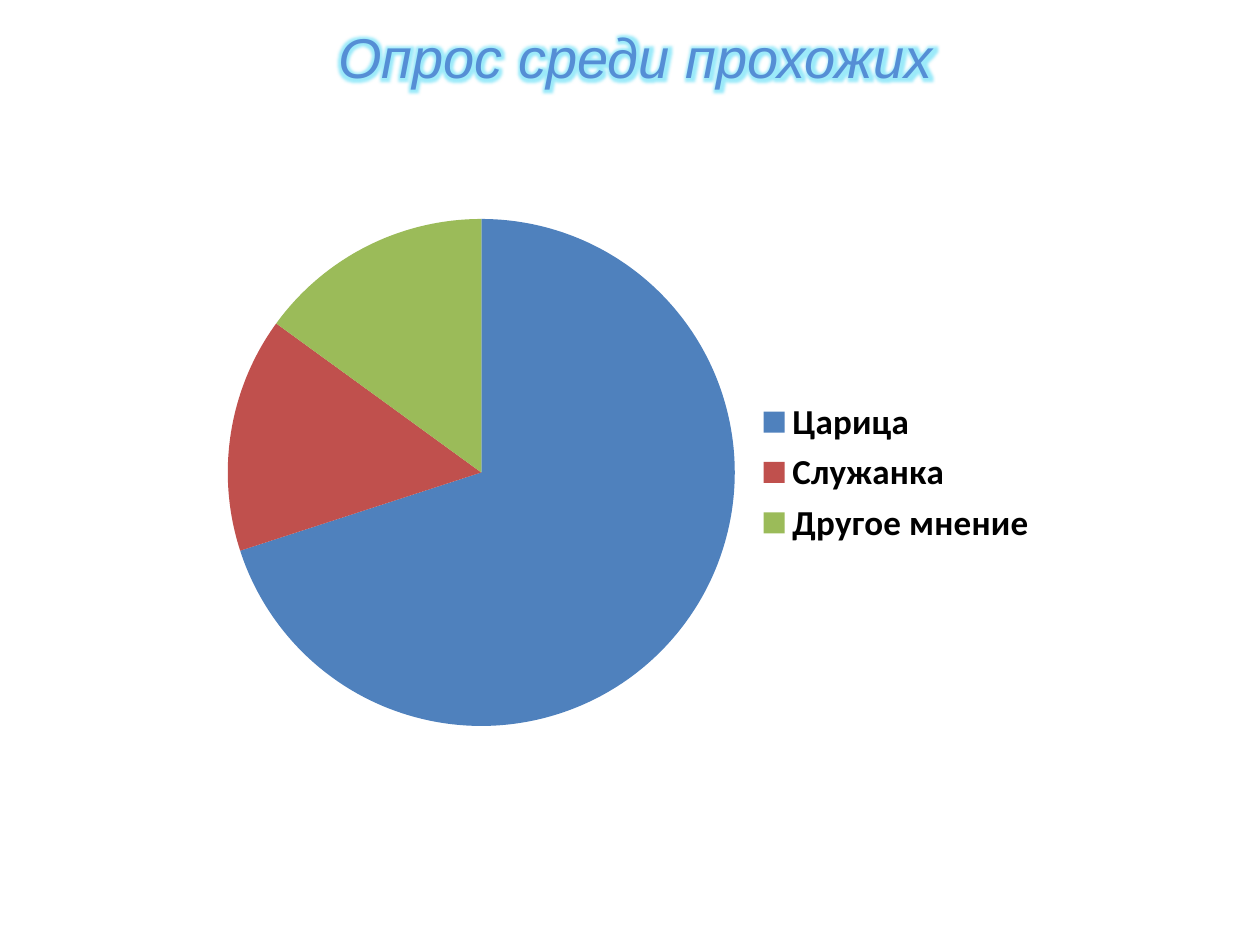
from dataclasses import dataclass

from lxml import etree
from pptx import Presentation
from pptx.chart.data import CategoryChartData
from pptx.dml.color import RGBColor
from pptx.enum.chart import XL_CHART_TYPE, XL_LEGEND_POSITION
from pptx.enum.text import MSO_ANCHOR, MSO_AUTO_SIZE, PP_ALIGN
from pptx.oxml.ns import qn
from pptx.util import Inches, Pt

PIE = XL_CHART_TYPE.PIE
RIGHT = XL_LEGEND_POSITION.RIGHT
TOP = MSO_ANCHOR.TOP
GROW = MSO_AUTO_SIZE.SHAPE_TO_FIT_TEXT
CENTER = PP_ALIGN.CENTER


@dataclass
class Theme:
    title_font: str = "Arial"
    chart_font: str = "Calibri"
    title_size: int = 32
    chart_size: int = 18
    legend_size: int = 20
    title: str = "558ED5"
    glow: str = "5ADDF7"
    text: str = "000000"
    slices: tuple = ("4F81BD", "C0504D", "9BBB59")


theme = Theme()
rgb = RGBColor.from_string

prs = Presentation()
prs.slide_width, prs.slide_height = Inches(10), Inches(7.5)
s = prs.slides.add_slide(prs.slide_layouts[5])

# Title
title = s.shapes.title
title.left, title.top = Inches(0.91), Inches(0.13)
title.width, title.height = Inches(8.27), Inches(0.64)
tf = title.text_frame
tf.text = "Опрос среди прохожих"
tf.word_wrap = True
tf.auto_size = GROW
tf.vertical_anchor = TOP
p = tf.paragraphs[0]
p.alignment = CENTER
r = p.runs[0]
r.font.name = theme.title_font
r.font.size = Pt(theme.title_size)
r.font.italic = True
r.font.color.rgb = rgb(theme.title)

# Title outline and glow
rPr = r.font.fill._xPr
ln = etree.Element(qn("a:ln"), w=str(Pt(0.75)))
line_fill = etree.SubElement(ln, qn("a:solidFill"))
etree.SubElement(line_fill, qn("a:srgbClr"), val=theme.title)
rPr.insert(0, ln)
effects = etree.Element(qn("a:effectLst"))
glow = etree.SubElement(effects, qn("a:glow"), rad=str(Pt(8)))
glow_color = etree.SubElement(glow, qn("a:srgbClr"), val=theme.glow)
etree.SubElement(glow_color, qn("a:alpha"), val="60000")
rPr.find(qn("a:solidFill")).addnext(effects)

# Survey pie chart
data = CategoryChartData()
data.categories = ["Царица", "Служанка", "Другое мнение"]
data.add_series("Series 1", (70, 15, 15))
chart = s.shapes.add_chart(
    PIE, Inches(1.67), Inches(1.53), Inches(6.67), Inches(4.44), data
).chart
chart.has_title = False
chart.font.name = theme.chart_font
chart.font.size = Pt(theme.chart_size)
chart.font.color.rgb = rgb(theme.text)

plot = chart.plots[0]
plot.vary_by_categories = True
for i, color in enumerate(theme.slices):
    fill = plot.series[0].points[i].format.fill
    fill.solid()
    fill.fore_color.rgb = rgb(color)

# Legend
chart.has_legend = True
legend = chart.legend
legend.position = RIGHT
legend.include_in_layout = False
legend.font.name = theme.chart_font
legend.font.size = Pt(theme.legend_size)
legend.font.bold = True
legend.font.color.rgb = rgb(theme.text)

prs.save("out.pptx")
